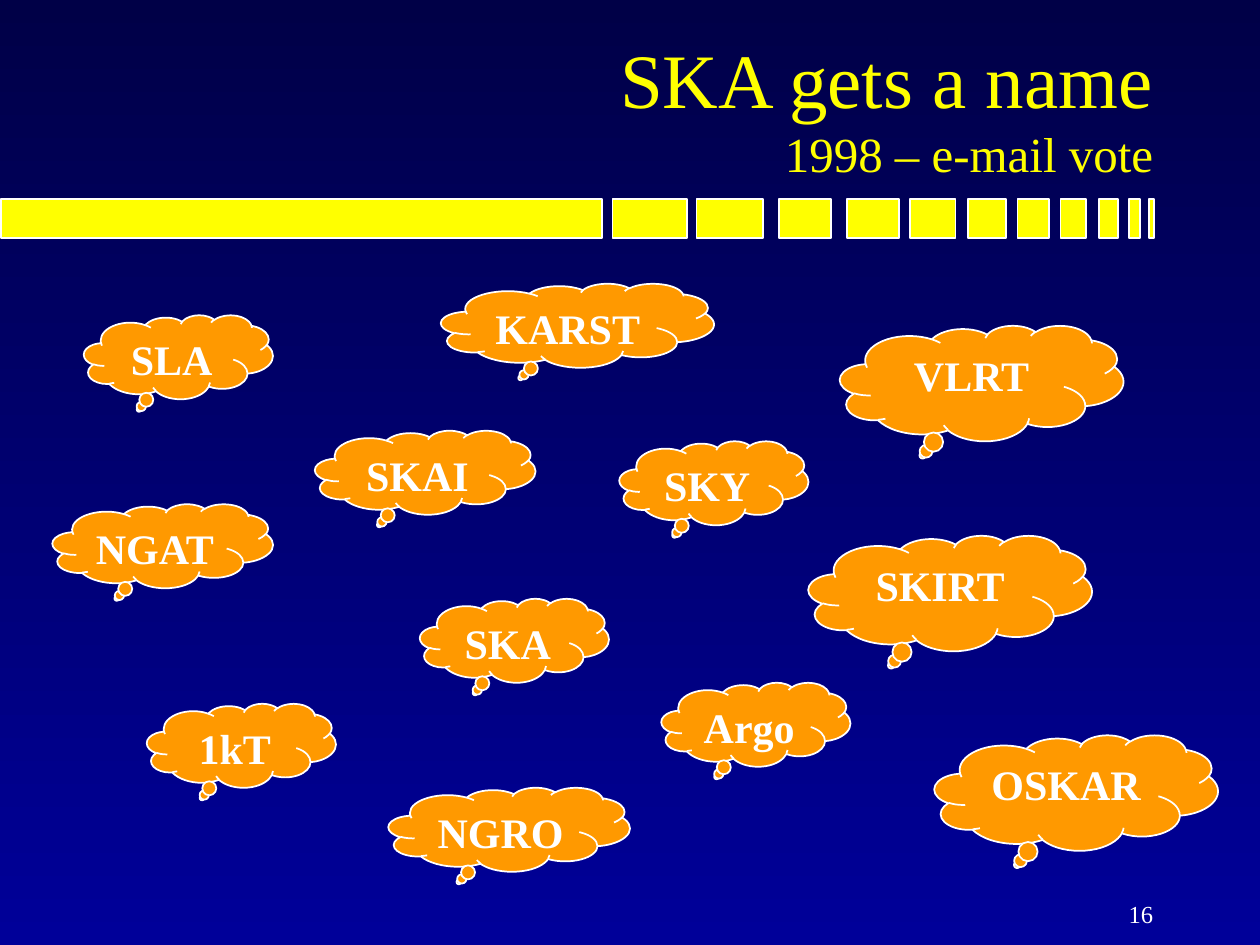
from dataclasses import dataclass

from pptx import Presentation
from pptx.dml.color import RGBColor
from pptx.enum.shapes import MSO_SHAPE
from pptx.enum.text import MSO_ANCHOR, PP_ALIGN
from pptx.util import Pt


@dataclass(frozen=True)
class Theme:
    font: str = "Times New Roman"
    yellow: RGBColor = RGBColor(0xFF, 0xFF, 0x00)
    orange: RGBColor = RGBColor(0xFF, 0x99, 0x00)
    white: RGBColor = RGBColor(0xFF, 0xFF, 0xFF)
    sky_top: RGBColor = RGBColor(0x00, 0x00, 0x47)
    sky_bottom: RGBColor = RGBColor(0x00, 0x00, 0x99)
    title: int = 44
    subtitle: int = 28
    name: int = 24
    number: int = 14


THEME = Theme()

# Left edge and width of each dash, measured from the left of the rule
DASHES = [
    (0.5, 343.5), (350, 42.5), (398, 38), (445, 30), (484, 30), (520, 26),
    (553, 22), (581.5, 18), (606, 14.5), (628, 11), (645, 6.5), (656.5, 3),
]

# Clouds sit on a 6 pt grid: name, column, row, columns wide, rows high
GRID = 6
CLOUDS = [
    ("NGRO", 37, 75, 23, 8), ("NGAT", 5, 48, 21, 8),
    ("KARST", 42, 27, 26, 8), ("SKAI", 30, 41, 21, 8),
    ("1kT", 14, 67, 18, 8), ("SKA", 40, 57, 18, 8),
    ("VLRT", 80, 31, 27, 11), ("SKIRT", 77, 51, 27, 11),
    ("OSKAR", 89, 70, 27, 11), ("Argo", 63, 65, 18, 8),
    ("SLA", 8, 30, 18, 8), ("SKY", 59, 42, 18, 8),
]


def add_run(paragraph, words, size, color, bold=False):
    run = paragraph.add_run()
    run.text = words
    run.font.name = THEME.font
    run.font.size = Pt(size)
    run.font.bold = bold
    run.font.color.rgb = color


def add_outlined(slide, kind, box, fill):
    shape = slide.shapes.add_shape(kind, *map(Pt, box))
    shape.shadow.inherit = False
    shape.fill.solid()
    shape.fill.fore_color.rgb = fill
    shape.line.color.rgb = THEME.white
    shape.line.width = Pt(1)
    return shape


def add_right_text(slide, box, anchor):
    frame = slide.shapes.add_textbox(*map(Pt, box)).text_frame
    frame.word_wrap = True
    frame.vertical_anchor = anchor
    paragraph = frame.paragraphs[0]
    paragraph.alignment = PP_ALIGN.RIGHT
    return paragraph


def paint_background(slide):
    fill = slide.background.fill
    fill.gradient()
    fill.gradient_angle = 270
    for stop, color in zip(fill.gradient_stops, (THEME.sky_top, THEME.sky_bottom)):
        stop.color.rgb = color
    fill.gradient_stops[0].position = 0
    fill.gradient_stops[1].position = 1


def add_title(slide, box):
    heading = add_right_text(slide, box, MSO_ANCHOR.BOTTOM)
    add_run(heading, "SKA gets a name", THEME.title, THEME.yellow)
    heading.add_line_break()
    add_run(heading, "1998 – e-mail vote", THEME.subtitle, THEME.yellow)


def add_dashed_rule(slide, left, top, height):
    for offset, width in DASHES:
        add_outlined(slide, MSO_SHAPE.RECTANGLE,
                     (left + offset, top, width, height), THEME.yellow)


def add_name_clouds(slide, left, top):
    for name, column, row, columns, rows in CLOUDS:
        box = (left + column * GRID, top + row * GRID, columns * GRID, rows * GRID)
        cloud = add_outlined(slide, MSO_SHAPE.CLOUD_CALLOUT, box, THEME.orange)
        frame = cloud.text_frame
        frame.word_wrap = True
        frame.margin_left = frame.margin_right = 0
        frame.vertical_anchor = MSO_ANCHOR.TOP
        label = frame.paragraphs[0]
        label.alignment = PP_ALIGN.CENTER
        add_run(label, name, THEME.name, THEME.white, bold=True)


def add_page_number(slide, box):
    add_run(add_right_text(slide, box, MSO_ANCHOR.TOP), "16", THEME.number, THEME.white)


def main():
    deck = Presentation()
    deck.slide_width, deck.slide_height = Pt(720), Pt(540)
    slide = deck.slides.add_slide(deck.slide_layouts[6])

    # Backdrop and header
    paint_background(slide)
    add_dashed_rule(slide, left=0, top=113.75, height=22.5)
    add_title(slide, (186, 15, 480, 93))

    # Proposed names and footer
    add_page_number(slide, (516, 510, 150, 36))
    add_name_clouds(slide, left=0, top=0)

    deck.save("out.pptx")


if __name__ == "__main__":
    main()
